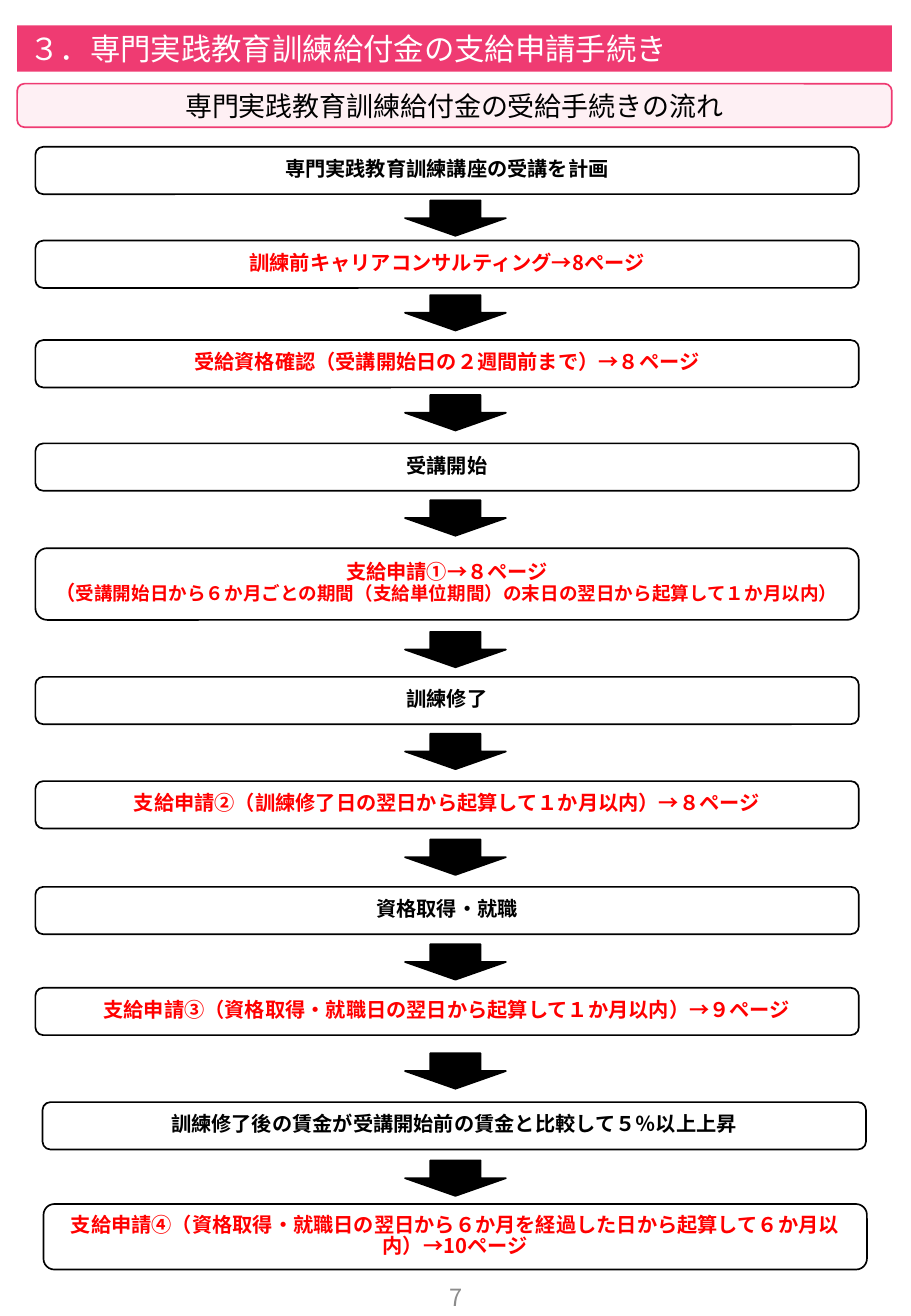
from lxml import etree
from pptx import Presentation
from pptx.dml.color import RGBColor
from pptx.enum import shapes, text
from pptx.oxml.ns import qn
from pptx.util import Cm, Pt

PINK = RGBColor(0xEF, 0x3B, 0x72)
PALE_PINK = RGBColor(0xFE, 0xF0, 0xF4)
BLACK = RGBColor(0, 0, 0)
WHITE = RGBColor(0xFF, 0xFF, 0xFF)
RED = RGBColor(0xFF, 0, 0)
GREY = RGBColor(0x8C, 0x8C, 0x8C)
FONT = "Noto Sans CJK JP"
ROUNDED = shapes.MSO_SHAPE.ROUNDED_RECTANGLE
DOWN_ARROW = shapes.MSO_SHAPE.DOWN_ARROW
CENTER = text.PP_ALIGN.CENTER


def write(box, lines, color, size, align=CENTER, bold=False, spacing=1.0):
    """Fill a box with lines; each line is a list of (words, size or None)."""
    frame = box.text_frame
    frame.word_wrap = True
    frame.auto_size = text.MSO_AUTO_SIZE.NONE
    frame.vertical_anchor = text.MSO_ANCHOR.MIDDLE
    for number, line in enumerate(lines):
        para = frame.add_paragraph() if number else frame.paragraphs[0]
        para.alignment = align
        para.line_spacing = spacing
        for words, own_size in line:
            span = para.add_run()
            span.text = words
            span.font.color.rgb = color
            style = {"name": FONT, "size": Pt(own_size or size), "bold": bold}
            for key, value in style.items():
                setattr(span.font, key, value)
            latin = span.font._element.find(qn("a:latin"))
            east_asian = etree.Element(qn("a:ea"), typeface=FONT)
            latin.addnext(east_asian)


def add_outlined(kind, left, top, width, height, line, fill=None):
    shape = page.shapes.add_shape(kind, Cm(left), Cm(top), Cm(width), Cm(height))
    shape.shadow.inherit = False
    if fill is None:
        shape.fill.background()
    else:
        shape.fill.solid()
        shape.fill.fore_color.rgb = fill
    shape.line.color.rgb = line
    shape.line.width = Pt(1)
    return shape


deck = Presentation()
deck.slide_width, deck.slide_height = Cm(19.05), Cm(27.51)
page = deck.slides.add_slide(deck.slide_layouts[5])

# Headings
title = page.shapes.title
place = {"left": 0.36, "top": 0.53, "width": 18.29, "height": 0.97}
for key, value in place.items():
    setattr(title, key, Cm(value))
title.fill.solid()
title.fill.fore_color.rgb = PINK
write(title, [[("３．専門実践教育訓練給付金の支給申請手続き", None)]], WHITE, 18,
      align=text.PP_ALIGN.LEFT)

subtitle = add_outlined(ROUNDED, 0.36, 1.75, 18.29, 0.91, PINK, PALE_PINK)
write(subtitle, [[("専門実践教育訓練給付金の受給手続きの流れ", None)]], BLACK, 16)

# Flow steps: left, top, height, colour, lines
STEPS = [
    (0.74, 3.07, 0.99, BLACK, [[("専門実践教育訓練講座の受講を計画", None)]]),
    (0.74, 5.03, 0.99, RED, [[("訓練前キャリアコンサルティング→8ページ", None)]]),
    (0.74, 7.11, 0.99, RED,
     [[("受給資格確認（受講開始日の２週間前まで）→８ページ", None)]]),
    (0.74, 9.27, 0.99, BLACK, [[("受講開始", None)]]),
    (0.74, 11.46, 1.5, RED,
     [[("支給申請①→８ページ", None)],
      [("（", None),
       ("受講開始日から６か月ごとの期間（支給単位期間）の末日の翌日から起算して１か月以内）", 11)]]),
    (0.74, 14.15, 0.99, BLACK, [[("訓練修了", None)]]),
    (0.74, 16.33, 0.99, RED,
     [[("支給申請②（訓練修了日の翌日から起算して１か月以内）→８ページ", None)]]),
    (0.74, 18.54, 0.99, BLACK, [[("資格取得・就職", None)]]),
    (0.74, 20.65, 0.99, RED,
     [[("支給申請③（資格取得・就職日の翌日から起算して１か月以内）→９ページ", None)]]),
    (0.89, 23.04, 0.99, BLACK,
     [[("訓練修了後の賃金が受講開始前の賃金と比較して５％以上上昇", None)]]),
    (0.91, 25.17, 1.37, RED,
     [[("支給申請④（資格取得・就職日の翌日から６か月を経過した日から起算して６か月以内）→10ページ",
        None)]]),
]
for left, top, height, color, lines in STEPS:
    step = add_outlined(ROUNDED, left, top, 17.22, height, BLACK)
    write(step, lines, color, 12, bold=True, spacing=0.85)

# Arrows between the steps
ARROW_TOPS = [4.19, 6.17, 8.26, 10.46, 13.21, 15.34, 17.55, 19.74, 22.02, 24.26]
for arrow_top in ARROW_TOPS:
    add_outlined(DOWN_ARROW, 8.47, arrow_top, 2.11, 0.74, BLACK, BLACK)

# Page number
page_number = page.shapes.add_textbox(Cm(7.39), Cm(26.37), Cm(4.29), Cm(1.47))
write(page_number, [[("7", None)]], GREY, 14)

deck.save("out.pptx")
